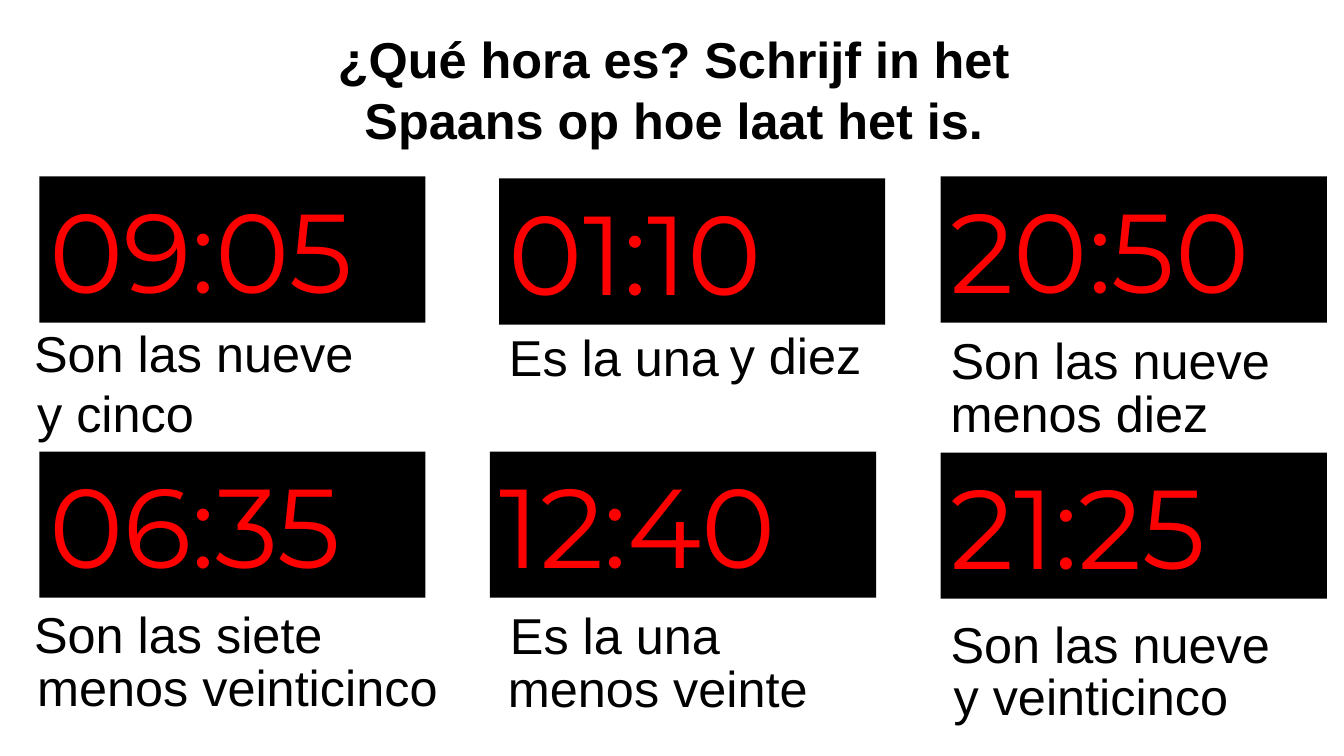
from dataclasses import dataclass

from pptx import Presentation
from pptx.dml.color import RGBColor
from pptx.enum.shapes import MSO_SHAPE
from pptx.enum.text import MSO_ANCHOR, MSO_AUTO_SIZE, PP_ALIGN
from pptx.util import Inches, Pt

RECT = MSO_SHAPE.RECTANGLE
TOP = MSO_ANCHOR.TOP
GROW = MSO_AUTO_SIZE.SHAPE_TO_FIT_TEXT
LEFT, CENTER = PP_ALIGN.LEFT, PP_ALIGN.CENTER

SLIDE_W, SLIDE_H = 13.33, 7.5
# Grid of clocks: origin and pitch
GRID_X, GRID_Y = 0.39, 1.75
COL, ROW = 4.47, 2.73
CLOCK_W, CLOCK_H = 3.83, 1.45
LINE_H = 0.71


@dataclass(frozen=True)
class Theme:
    ink: RGBColor = RGBColor(0, 0, 0)
    digits: RGBColor = RGBColor(255, 0, 0)
    body_font: str = "Arial"
    clock_font: str = "Montserrat"
    body_size: int = 36
    clock_size: int = 80


# Column, row, time and its nudge; then each answer line with its nudge
CLOCKS = [
    (0, 0, "09:05", (0, 0),
     [("Son las nueve", (-0.15, 1.4)), ("y cinco", (-0.12, 1.99))]),
    (1, 0, "01:10", (0.09, 0.02),
     [("Es la una", (0.09, 1.44)), ("y diez", (2.28, 1.42))]),
    (2, 0, "20:50", (0, 0),
     [("Son las nueve", (0, 1.47)), ("menos diez", (0, 1.99))]),
    (0, 1, "06:35", (0, 0),
     [("Son las siete", (-0.15, 1.45)), ("menos veinticinco", (-0.12, 1.98))]),
    (1, 1, "12:40", (0, 0),
     [("Es la una", (0.1, 1.46)), ("menos veinte", (0.08, 1.99))]),
    (2, 1, "21:25", (0, 0.01),
     [("Son las nueve", (0, 1.55)), ("y veinticinco", (0.03, 2.07))]),
]


class Deck:
    def __init__(self, theme):
        self.theme = theme
        self.prs = Presentation()
        self.prs.slide_width = Inches(SLIDE_W)
        self.prs.slide_height = Inches(SLIDE_H)
        self.s = self.prs.slides.add_slide(self.prs.slide_layouts[6])

    def cell(self, col, row, nudge):
        return GRID_X + col * COL + nudge[0], GRID_Y + row * ROW + nudge[1]

    def set_text(self, sp, text, font, size, color, bold=False, align=LEFT):
        tf = sp.text_frame
        tf.word_wrap = True
        tf.auto_size = GROW
        tf.vertical_anchor = TOP
        p = tf.paragraphs[0]
        p.alignment = align
        r = p.add_run()
        r.text = text
        r.font.name = font
        r.font.size = Pt(size)
        r.font.bold = bold
        r.font.color.rgb = color

    def text(self, x, y, w, h, text, bold=False, align=LEFT):
        t = self.theme
        sp = self.s.shapes.add_textbox(*map(Inches, (x, y, w, h)))
        self.set_text(sp, text, t.body_font, t.body_size, t.ink, bold, align)

    def clock(self, col, row, time, nudge):
        t = self.theme
        x, y = self.cell(col, row, nudge)
        sp = self.s.shapes.add_shape(RECT, *map(Inches, (x, y, CLOCK_W, CLOCK_H)))
        sp.shadow.inherit = False
        sp.fill.solid()
        sp.fill.fore_color.rgb = t.ink
        sp.line.fill.background()
        self.set_text(sp, time, t.clock_font, t.clock_size, t.digits)

    def answer(self, col, row, text, nudge):
        x, y = self.cell(col, row, nudge)
        self.text(x, y, min(COL, SLIDE_W - x), LINE_H, text)


def main():
    deck = Deck(Theme())
    # Clocks
    for col, row, time, nudge, _ in CLOCKS:
        deck.clock(col, row, time, nudge)
    # Title
    deck.text(2.3, 0.23, 8.77, 1.31,
              "¿Qué hora es? Schrijf in het Spaans op hoe laat het is.",
              bold=True, align=CENTER)
    # Answers
    for col, row, _, _, lines in CLOCKS:
        for text, nudge in lines:
            deck.answer(col, row, text, nudge)
    deck.prs.save("out.pptx")


if __name__ == "__main__":
    main()
